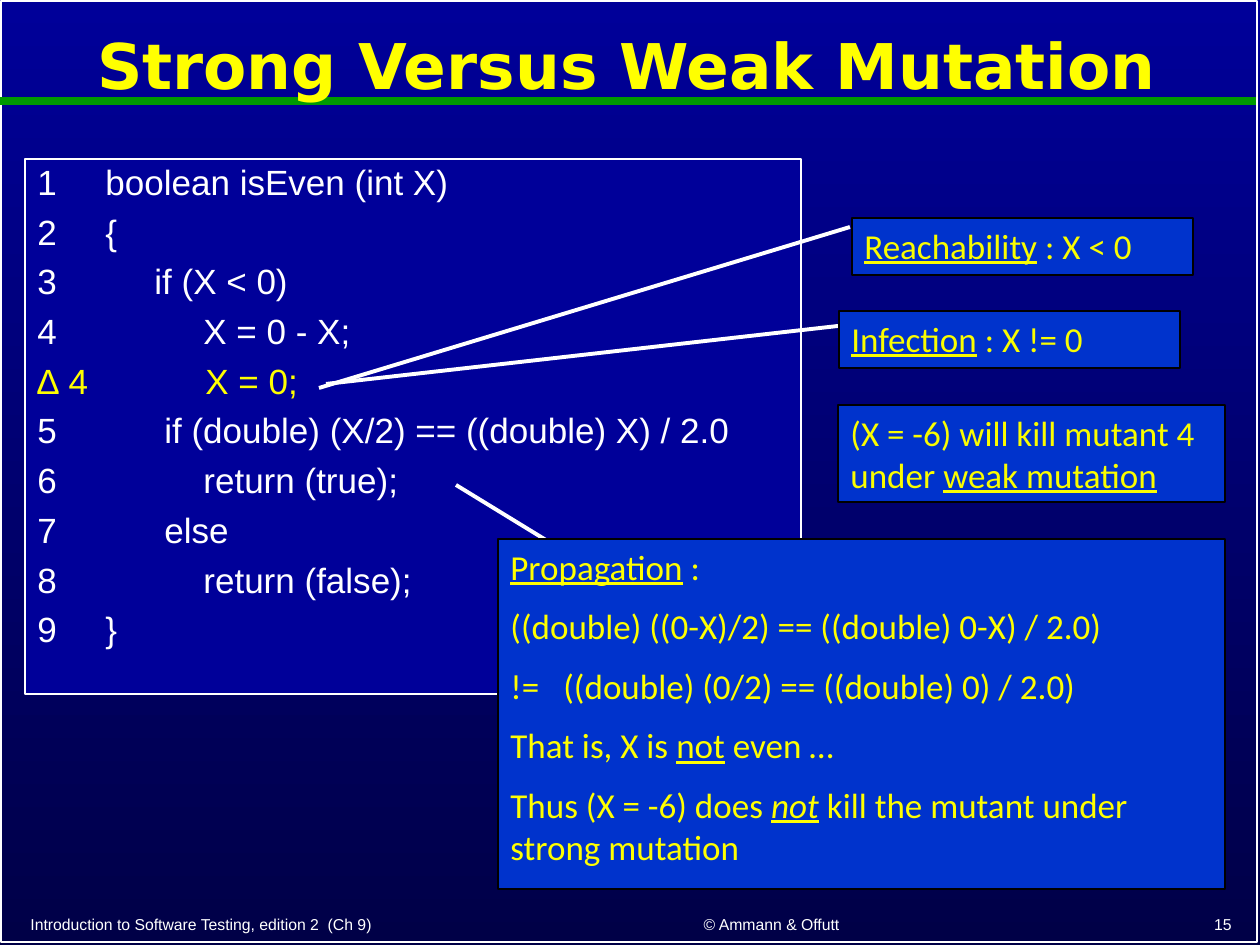
import pptx
import pptx.dml.color
import pptx.enum.shapes
import pptx.enum.text
import pptx.oxml.ns
import pptx.util
from lxml import etree

ALIGN = pptx.enum.text.PP_ALIGN
ANCHOR = pptx.enum.text.MSO_ANCHOR
WHITE, YELLOW, NOTE_YELLOW = "FFFFFF", "FFFF00", "FAFD00"
NAVY, DEEP_NAVY, BLUE, GREEN, BLACK = "000099", "000047", "0033CC", "009900", "000000"


def emu(px):
    return pptx.util.Emu(round(px * 914400 / 126))


def color(value):
    return pptx.dml.color.RGBColor.from_string(value)


class Painter:
    """Holds the text style and the current slide."""

    note_font, code_font, title_font = "Calibri", "Arial", "DejaVu Sans"
    text_size, footer_size, title_size = 20, 9, 36

    def __init__(self, page):
        self.page = page

    def background(self, top, bottom):
        fill = self.page.background.fill
        fill.gradient()
        fill.gradient_angle = 270
        for stop, value, position in zip(fill.gradient_stops, (top, bottom), (0, 1)):
            stop.color.rgb = color(value)
            stop.position = position

    def rectangle(self, left, top, width, height, fill, line, weight):
        box = self.page.shapes.add_shape(
            pptx.enum.shapes.MSO_SHAPE.RECTANGLE, *map(emu, (left, top, width, height)))
        box.shadow.inherit = False
        if fill:
            box.fill.solid()
            box.fill.fore_color.rgb = color(fill)
        else:
            box.fill.background()
        box.line.color.rgb = color(line)
        box.line.width = pptx.util.Pt(weight)
        self.prepare(box.text_frame, ANCHOR.TOP)
        return box

    def prepare(self, frame, anchor):
        frame.word_wrap = True
        frame.vertical_anchor = anchor

    def line(self, start, end, value, weight):
        connector = self.page.shapes.add_connector(
            pptx.enum.shapes.MSO_CONNECTOR.STRAIGHT, *map(emu, (*start, *end)))
        connector.line.color.rgb = color(value)
        connector.line.width = pptx.util.Pt(weight)
        etree.SubElement(connector._element.spPr, pptx.oxml.ns.qn("a:effectLst"))

    def font(self, span, name, size, value):
        span.font.name = name
        span.font.size = pptx.util.Pt(size)
        span.font.color.rgb = color(value)

    def tab_stop(self, para, px):
        tabs = etree.SubElement(para._p.get_or_add_pPr(), pptx.oxml.ns.qn("a:tabLst"))
        etree.SubElement(tabs, pptx.oxml.ns.qn("a:tab"), pos=str(emu(px)), algn="l")

    def label(self, left, top, width, height, text, align, anchor, name, size, value):
        box = self.page.shapes.add_textbox(*map(emu, (left, top, width, height)))
        self.prepare(box.text_frame, anchor)
        box.text_frame.text = text
        para = box.text_frame.paragraphs[0]
        para.alignment = align
        self.font(para.runs[0], name, size, value)
        return para

    def footer(self, left, width, text, align):
        self.label(left, 903, width, 37, text, align, ANCHOR.BOTTOM,
                   self.code_font, self.footer_size, WHITE)

    def title(self, text):
        para = self.label(1, 14, 1251, 111, text, ALIGN.CENTER, ANCHOR.MIDDLE,
                          self.title_font, self.title_size, YELLOW)
        para.line_spacing = 0.9
        para.runs[0].font.bold = True

    def code(self, left, top, width, height, lines):
        """Lines are (number, code start in px, code, colour)."""
        frame = self.rectangle(left, top, width, height, NAVY, WHITE, 0.75).text_frame
        frame.text = "\n".join(f"{number}\t{code}" for number, _, code, _ in lines)
        for para, (_, start, _, value) in zip(frame.paragraphs, lines):
            para.alignment = ALIGN.LEFT
            para.line_spacing = 0.9
            para.space_before = pptx.util.Pt(6.8)
            self.tab_stop(para, start)
            for span in para.runs:
                self.font(span, self.code_font, self.text_size, value)

    def note(self, left, top, width, height, paragraphs, value=NOTE_YELLOW):
        """Paragraphs are lists of (text, marks), where marks may hold u and i."""
        frame = self.rectangle(left, top, width, height, BLUE, BLACK, 1).text_frame
        for index, spans in enumerate(paragraphs):
            para = frame.add_paragraph() if index else frame.paragraphs[0]
            para.alignment = ALIGN.LEFT
            para.space_before = pptx.util.Pt(10)
            if any("\t" in text for text, _ in spans):
                self.tab_stop(para, 53)
            for text, marks in spans:
                span = para.add_run()
                span.text = text
                self.font(span, self.note_font, self.text_size, value)
                span.font.underline = "u" in marks
                span.font.italic = "i" in marks


def main():
    deck = pptx.Presentation()
    deck.slide_width, deck.slide_height = emu(1260), emu(945)
    painter = Painter(deck.slides.add_slide(deck.slide_layouts[6]))

    painter.background(NAVY, DEEP_NAVY)
    painter.rectangle(1, 1, 1256, 941, None, WHITE, 1)
    painter.line((0, 101), (1256, 101), GREEN, 4.5)
    painter.footer(18, 537, "Introduction to Software Testing, edition 2  (Ch 9)", ALIGN.LEFT)
    painter.footer(572, 399, "© Ammann & Offutt", ALIGN.CENTER)
    painter.footer(993, 251, "15", ALIGN.RIGHT)

    painter.code(25, 159, 776, 535, [
        ("1", 68, "boolean isEven (int X)", WHITE),
        ("2", 68, "{", WHITE),
        ("3", 117, "if (X < 0)", WHITE),
        ("4", 166, "X = 0 - X;", WHITE),
        ("∆ 4", 168, "X = 0;", YELLOW),
        ("5", 127, "if (double) (X/2) == ((double) X) / 2.0", WHITE),
        ("6", 166, "return (true);", WHITE),
        ("7", 127, "else", WHITE),
        ("8", 166, "return (false);", WHITE),
        ("9", 68, "}", WHITE),
    ])
    painter.title("Strong Versus Weak Mutation")

    painter.note(852, 218, 341, 57, [[("Reachability", "u"), (" : X < 0", "")]])
    painter.line((850, 227), (319, 388), WHITE, 2.25)
    painter.line((838, 326), (326, 384), WHITE, 2.25)
    painter.note(839, 311, 341, 57, [[("Infection", "u"), (" : X != 0", "")]])
    painter.note(838, 405, 387, 97, [
        [("(X = -6) will kill mutant 4 under ", ""), ("weak mutation", "u")]])
    painter.line((639, 597), (456, 485), WHITE, 2.25)
    painter.note(498, 539, 727, 350, [
        [("Propagation", "u"), (" :", "")],
        [("((double) ((0-X)/2) == ((double) 0-X) / 2.0)", "")],
        [("!=\t((double) (0/2) == ((double) 0) / 2.0)", "")],
        [("That is, X is ", ""), ("not", "u"), (" even …", "")],
        [("Thus (X = -6) does ", ""), ("not", "iu"),
         (" kill the mutant under strong mutation", "")],
    ], YELLOW)

    deck.save("out.pptx")


if __name__ == "__main__":
    main()
